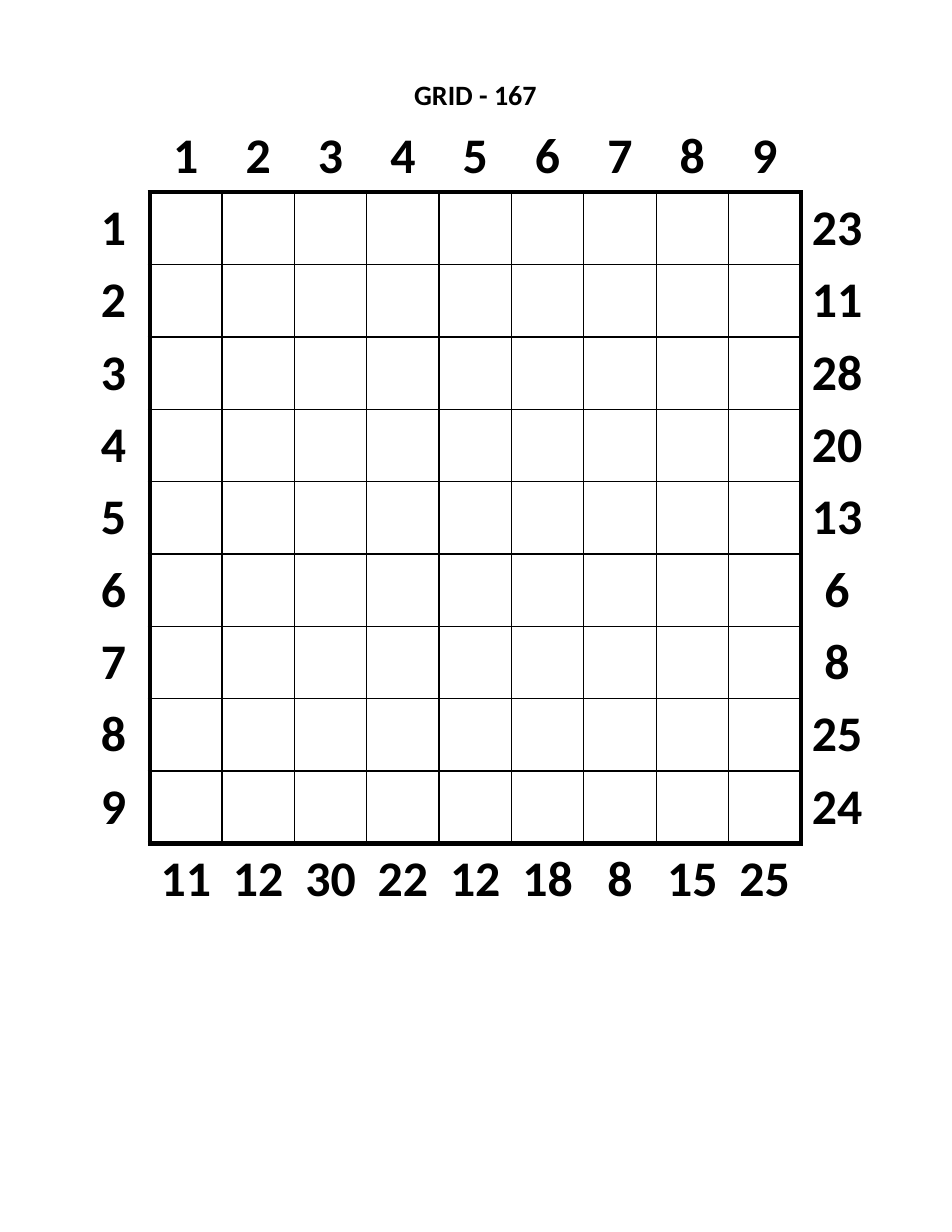
from lxml.etree import SubElement
from pptx import Presentation
from pptx.dml.color import RGBColor
from pptx.enum.text import MSO_ANCHOR, MSO_AUTO_SIZE, PP_ALIGN
from pptx.oxml.ns import qn
from pptx.util import Inches, Pt

COLORS = {"ink": "000000", "paper": "FFFFFF"}
FONT = "Calibri"
SIZE = 9  # playing squares along each side
ROWS = [23, 11, 28, 20, 13, 6, 8, 25, 24]
COLS = [11, 12, 30, 22, 12, 18, 8, 15, 25]


def write(frame, text, size=32, bold=True, color="ink", align=PP_ALIGN.CENTER):
    para = frame.paragraphs[0]
    para.alignment = align
    run = para.add_run()
    run.text = text
    font = run.font
    font.name, font.size, font.bold = FONT, Pt(size), bold
    font.color.rgb = RGBColor.from_string(COLORS[color])


def trim(item):
    item.margin_left = item.margin_top = 0
    item.margin_right = item.margin_bottom = 0


def inside(row, col):
    return 1 <= row <= SIZE and 1 <= col <= SIZE


def label(row, col):
    """Text of a square: numbers at top and left, totals at right and bottom."""
    last = SIZE + 1
    if 1 <= col <= SIZE:
        return {0: str(col), last: str(COLS[col - 1])}.get(row, "")
    if 1 <= row <= SIZE:
        return {0: str(row), last: str(ROWS[row - 1])}[col]
    return ""


def border(cell, row, col):
    """Thick lines around the playing area, thin ones in it, none beyond."""
    props = cell._tc.get_or_add_tcPr()
    sides = {"L": (0, -1), "R": (0, 1), "T": (-1, 0), "B": (1, 0)}
    for side, (down, right) in sides.items():
        count = inside(row, col) + inside(row + down, col + right)
        width = (0, 3, 1)[count]
        line = SubElement(props, qn(f"a:ln{side}"), w=str(int(Pt(width))))
        if width:
            fill = SubElement(line, qn("a:solidFill"))
            SubElement(fill, qn("a:srgbClr"), val=COLORS["ink"])
        else:
            SubElement(line, qn("a:noFill"))


def title(slide, left, top, width, height):
    box = slide.shapes.add_textbox(left, top, width, height)
    frame = box.text_frame
    frame.word_wrap = True
    frame.auto_size = MSO_AUTO_SIZE.SHAPE_TO_FIT_TEXT
    trim(frame)
    write(frame, "GRID - 167", size=18)


def grid(slide, left, top, width, height):
    count = SIZE + 2
    table = slide.shapes.add_table(count, count, left, top, width, height).table
    table.first_row = table.horz_banding = False
    for row in range(count):
        for col in range(count):
            cell = table.cell(row, col)
            border(cell, row, col)
            cell.fill.solid()
            cell.fill.fore_color.rgb = RGBColor.from_string(COLORS["paper"])
            text = label(row, col)
            if text:
                trim(cell)
                cell.vertical_anchor = MSO_ANCHOR.MIDDLE
                write(cell.text_frame, text)


def main():
    deck = Presentation()
    deck.slide_width, deck.slide_height = Inches(8.5), Inches(11)
    slide = deck.slides.add_slide(deck.slide_layouts[6])
    left, width = Inches(0.69), Inches(7.11)
    title(slide, left, Inches(0.69), width, Inches(0.3))
    grid(slide, left, Inches(1.07), width, width)
    deck.save("out.pptx")


if __name__ == "__main__":
    main()
